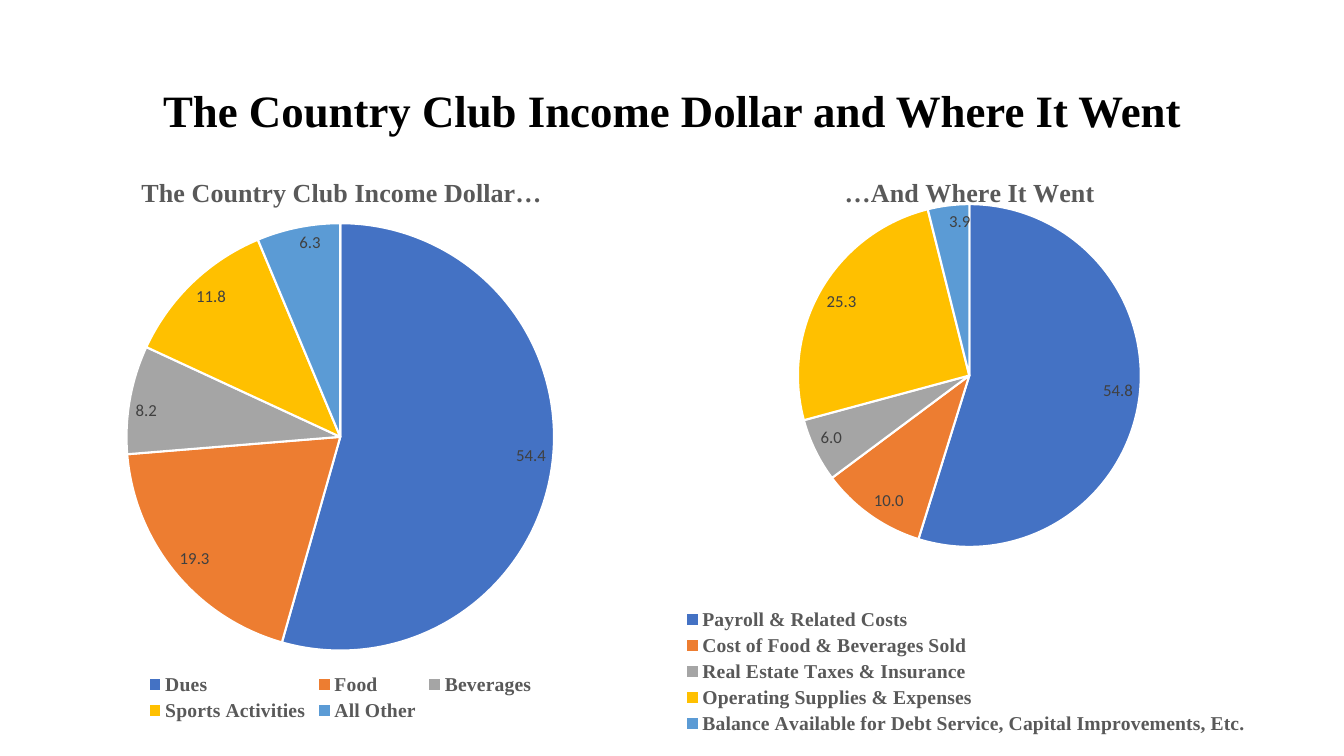
"""Build the country club income and spending slide."""
from lxml.etree import SubElement
from pptx import Presentation
from pptx.chart.data import CategoryChartData
from pptx.dml.color import RGBColor
from pptx.enum.chart import XL_CHART_TYPE, XL_LABEL_POSITION as LABEL, XL_LEGEND_POSITION as LEGEND
from pptx.enum.text import MSO_ANCHOR, PP_ALIGN
from pptx.oxml.ns import qn
from pptx.util import Inches, Pt

BLACK = RGBColor(0x00, 0x00, 0x00)
WHITE = RGBColor(0xFF, 0xFF, 0xFF)
GRAY = RGBColor(0x59, 0x59, 0x59)
DARK = RGBColor(0x40, 0x40, 0x40)
SLICES = [
    RGBColor(0x44, 0x72, 0xC4),
    RGBColor(0xED, 0x7D, 0x31),
    RGBColor(0xA5, 0xA5, 0xA5),
    RGBColor(0xFF, 0xC0, 0x00),
    RGBColor(0x5B, 0x9B, 0xD5),
]

INCOME = {"Dues": 54.4, "Food": 19.3, "Beverages": 8.2, "Sports Activities": 11.8, "All Other": 6.3}
SPENDING = {
    "Payroll & Related Costs": 54.8,
    "Cost of Food & Beverages Sold": 10,
    "Real Estate Taxes & Insurance": 6,
    "Operating Supplies & Expenses": 25.3,
    "Balance Available for Debt Service, Capital Improvements, Etc.": 3.9,
}


class Deck:
    """Hold the fonts and the current slide."""

    serif = "Times New Roman"
    sans = "Calibri"

    def __init__(self, prs):
        self.slide = prs.slides.add_slide(prs.slide_layouts[5])

    def style(self, font, name, size, color, bold=False):
        font.name, font.size, font.bold = name, Pt(size), bold
        font.color.rgb = color

    def title(self, text, x, y, w, h):
        sp = self.slide.shapes.title
        sp.left, sp.top, sp.width, sp.height = map(Inches, (x, y, w, h))
        tf = sp.text_frame
        tf.text = text
        tf.word_wrap = True
        tf.vertical_anchor = MSO_ANCHOR.MIDDLE
        p = tf.paragraphs[0]
        p.alignment = PP_ALIGN.CENTER
        p.line_spacing = 0.9
        self.style(p.runs[0].font, self.serif, 32, BLACK, True)

    def place(self, parent, inner=False, **fractions):
        for old in parent.findall(qn("c:layout")):
            parent.remove(old)
        layout = SubElement(parent, qn("c:layout"))
        manual = SubElement(layout, qn("c:manualLayout"))
        if inner:
            SubElement(manual, qn("c:layoutTarget")).set("val", "inner")
        for axis in "xy":
            SubElement(manual, qn(f"c:{axis}Mode")).set("val", "edge")
        for key, value in fractions.items():
            SubElement(manual, qn(f"c:{key}")).set("val", str(value))
        parent.insert(1 if parent.tag == qn("c:title") else 0, layout)

    def pie(self, heading, values, box, heading_at, plot):
        data = CategoryChartData(number_format="0.0")
        data.categories = list(values)
        data.add_series("Series 1", list(values.values()))
        frame = self.slide.shapes.add_chart(XL_CHART_TYPE.PIE, *map(Inches, box), data)
        chart = frame.chart
        self.style(chart.font, self.sans, 10, BLACK)

        chart.has_title = True
        tf = chart.chart_title.text_frame
        tf.text = heading
        self.style(tf.paragraphs[0].runs[0].font, self.serif, 18.6, GRAY, True)
        chart.chart_title.include_in_layout = False
        self.place(tf._txBody.getparent().getparent(), x=heading_at[0], y=heading_at[1])

        chart.has_legend = True
        chart.legend.position = LEGEND.BOTTOM
        chart.legend.include_in_layout = False
        self.style(chart.legend.font, self.serif, 14, GRAY, True)

        pie = chart.plots[0]
        pie.vary_by_categories = True
        for i, color in enumerate(SLICES):
            fmt = pie.series[0].points[i].format
            fmt.fill.solid()
            fmt.fill.fore_color.rgb = color
            fmt.line.color.rgb = WHITE
            fmt.line.width = Pt(1.5)

        pie.has_data_labels = True
        labels = pie.data_labels
        labels.show_value = True
        labels.show_percentage = False
        labels.number_format = "0.0"
        labels.number_format_is_linked = False
        labels.position = LABEL.INSIDE_END
        self.style(labels.font, self.sans, 12, DARK)
        area = chart._chartSpace.chart.plotArea
        self.place(area, True, **dict(zip("xywh", plot)))


def main():
    prs = Presentation()
    prs.slide_width, prs.slide_height = Inches(13.33), Inches(7.5)
    deck = Deck(prs)
    deck.title("The Country Club Income Dollar and Where It Went", 0.92, 0.4, 11.5, 1.45)
    deck.pie("The Country Club Income Dollar…", INCOME, (0.49, 1.47, 5.77, 5.73),
             (0.15, 0.04), (0.13, 0.13, 0.74, 0.74))
    deck.pie("…And Where It Went", SPENDING, (6.11, 1.47, 6.94, 5.86),
             (0.32, 0.04), (0.26, 0.07, 0.49, 0.63))
    prs.save("out.pptx")


if __name__ == "__main__":
    main()
